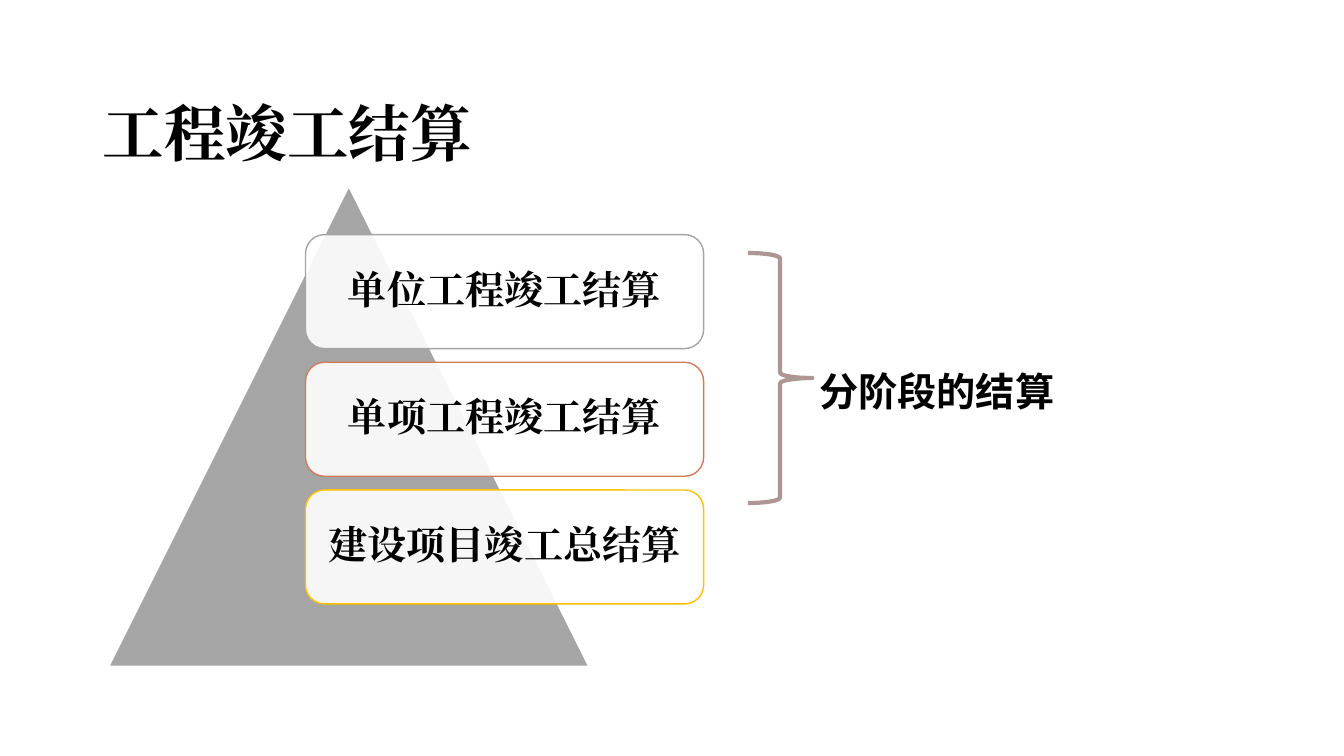
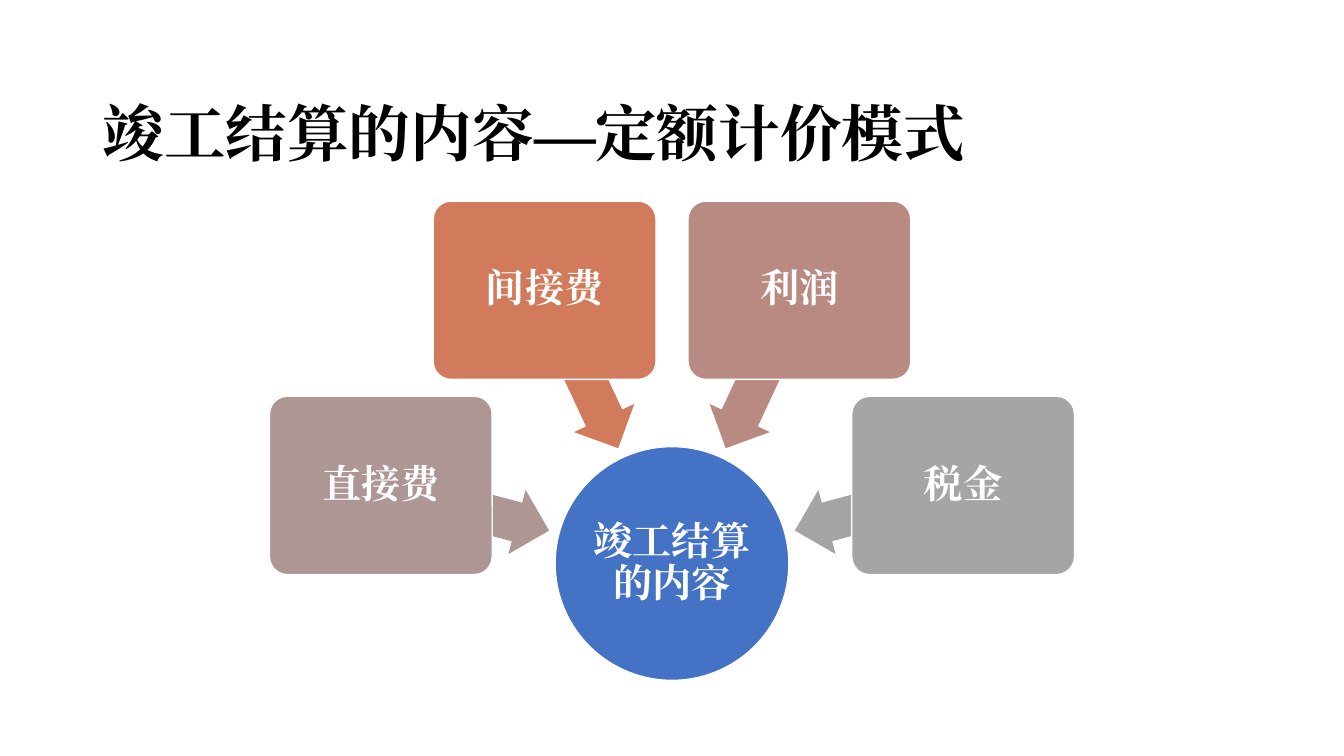
from dataclasses import dataclass
from math import cos, radians, sin

from lxml.etree import SubElement
from pptx import Presentation
from pptx.dml.color import RGBColor
from pptx.enum.shapes import MSO_SHAPE as SHAPE
from pptx.enum.text import MSO_ANCHOR as ANCHOR
from pptx.enum.text import MSO_AUTO_SIZE as AUTO_SIZE
from pptx.enum.text import PP_ALIGN as ALIGN
from pptx.oxml.ns import qn
from pptx.presentation import Presentation as Deck
from pptx.shapes.autoshape import Shape
from pptx.slide import Slide
from pptx.util import Pt


@dataclass(frozen=True)
class Theme:
    font: str = "Times New Roman"
    label_font: str = "Noto Sans CJK SC"
    title_size: float = 44
    text_size: float = 28
    black: str = "000000"
    white: str = "FFFFFF"
    grey: str = "A5A5A5"
    mauve: str = "AD9694"
    orange: str = "D17B5C"
    rose: str = "B98A82"
    yellow: str = "FFC000"
    blue: str = "4472C4"


THEME = Theme()


@dataclass(frozen=True)
class Box:
    left: float
    top: float
    width: float
    height: float

    @classmethod
    def centred(cls, x: float, y: float, width: float, height: float) -> "Box":
        return cls(x - width / 2, y - height / 2, width, height)

    def lengths(self) -> tuple[Pt, Pt, Pt, Pt]:
        return Pt(self.left), Pt(self.top), Pt(self.width), Pt(self.height)


@dataclass(frozen=True)
class Item:
    text: str
    color: str


@dataclass(frozen=True)
class Spoke(Item):
    angle: float


STAGES = (
    Item("单位工程竣工结算", THEME.grey),
    Item("单项工程竣工结算", THEME.orange),
    Item("建设项目竣工总结算", THEME.yellow),
)
SPOKES = (
    Spoke("直接费", THEME.mauve, 195),
    Spoke("间接费", THEME.orange, 245),
    Spoke("利润", THEME.rose, 295),
    Spoke("税金", THEME.grey, 345),
)


def write(shape: Shape, text: str, *, size: float = THEME.text_size,
          color: str = THEME.black, font: str = THEME.font,
          align: ALIGN = ALIGN.CENTER, spacing: float = 0.9,
          anchor: ANCHOR = ANCHOR.MIDDLE, wrap: bool = True,
          inset: float | None = None) -> None:
    tf = shape.text_frame
    tf.word_wrap = wrap
    tf.vertical_anchor = anchor
    if inset is not None:
        tf.margin_left = tf.margin_right = Pt(inset)
        tf.margin_top = tf.margin_bottom = Pt(inset)
    p = tf.paragraphs[0]
    p.alignment, p.line_spacing = align, spacing
    r = p.add_run()
    r.text = text
    r.font.size, r.font.bold, r.font.name = Pt(size), True, font
    r.font.color.rgb = RGBColor.from_string(color)
    SubElement(r.font._element, qn("a:ea"), typeface=font)


def draw(s: Slide, kind: SHAPE, box: Box, *, fill: str | None = None,
         line: str | None = None, weight: float = 1, opacity: int = 100,
         adjust: tuple[float, ...] = (), rotation: float = 0) -> Shape:
    sp = s.shapes.add_shape(kind, *box.lengths())
    sp.shadow.inherit = False
    sp.rotation = rotation
    for i, value in enumerate(adjust):
        sp.adjustments[i] = value
    if fill:
        sp.fill.solid()
        sp.fill.fore_color.rgb = RGBColor.from_string(fill)
        if opacity < 100:
            color = sp.fill._xPr.find(f"{qn('a:solidFill')}/{qn('a:srgbClr')}")
            SubElement(color, qn("a:alpha"), val=str(opacity * 1000))
    else:
        sp.fill.background()
    if line:
        sp.line.color.rgb = RGBColor.from_string(line)
        sp.line.width = Pt(weight)
    else:
        sp.line.fill.background()
    return sp


def add_titled_slide(prs: Deck, title: str) -> Slide:
    s = prs.slides.add_slide(prs.slide_layouts[5])
    sp = s.shapes.title
    sp.left, sp.top, sp.width, sp.height = Box(66, 28.8, 828, 104.4).lengths()
    write(sp, title, size=THEME.title_size, align=ALIGN.JUSTIFY, spacing=1.5)
    sp.text_frame.auto_size = AUTO_SIZE.NONE
    return s


def add_stages_slide(prs: Deck) -> None:
    s = add_titled_slide(prs, "工程竣工结算")
    draw(s, SHAPE.ISOSCELES_TRIANGLE, Box(77.8, 133.2, 342.7, 342.7),
         fill=THEME.grey, line=THEME.white)
    for i, stage in enumerate(STAGES):
        sp = draw(s, SHAPE.ROUNDED_RECTANGLE,
                  Box(218.2, 167.6 + i * 91.2, 284.4, 81.4),
                  fill=THEME.white, line=stage.color, opacity=90)
        write(sp, stage.text, inset=8)
    draw(s, SHAPE.RIGHT_BRACE, Box(534.2, 180.7, 46.1, 178.6),
         line=THEME.mauve, weight=3)
    label = s.shapes.add_textbox(*Box(578.2, 258.5, 192.2, 41).lengths())
    write(label, "分阶段的结算", font=THEME.label_font, align=ALIGN.LEFT,
          spacing=1, anchor=ANCHOR.TOP, wrap=False)
    label.text_frame.auto_size = AUTO_SIZE.SHAPE_TO_FIT_TEXT


def add_contents_slide(prs: Deck) -> None:
    s = add_titled_slide(prs, "竣工结算的内容—定额计价模式")
    hub_x, hub_y = 480, 402.5
    arrow_radius, card_radius = 153.2, 215.3
    hub = draw(s, SHAPE.OVAL, Box.centred(hub_x, hub_y, 167, 167),
               fill=THEME.blue, line=THEME.white)
    write(hub, "竣工结算的内容", color=THEME.white, inset=1.4)
    for spoke in SPOKES:
        dx, dy = cos(radians(spoke.angle)), sin(radians(spoke.angle))
        draw(s, SHAPE.LEFT_ARROW,
             Box.centred(hub_x + arrow_radius * dx, hub_y + arrow_radius * dy,
                         124.6, 47.5),
             fill=spoke.color, adjust=(0.6, 0.5), rotation=spoke.angle)
        card = draw(s, SHAPE.ROUNDED_RECTANGLE,
                    Box.centred(hub_x + card_radius * dx,
                                hub_y + card_radius * dy, 159.1, 127.4),
                    fill=spoke.color, line=THEME.white, adjust=(0.1,))
        write(card, spoke.text, color=THEME.white, inset=4.3)


def main() -> None:
    prs = Presentation()
    prs.slide_width, prs.slide_height = Pt(960), Pt(540)
    add_stages_slide(prs)
    add_contents_slide(prs)
    prs.save("out.pptx")


if __name__ == "__main__":
    main()
